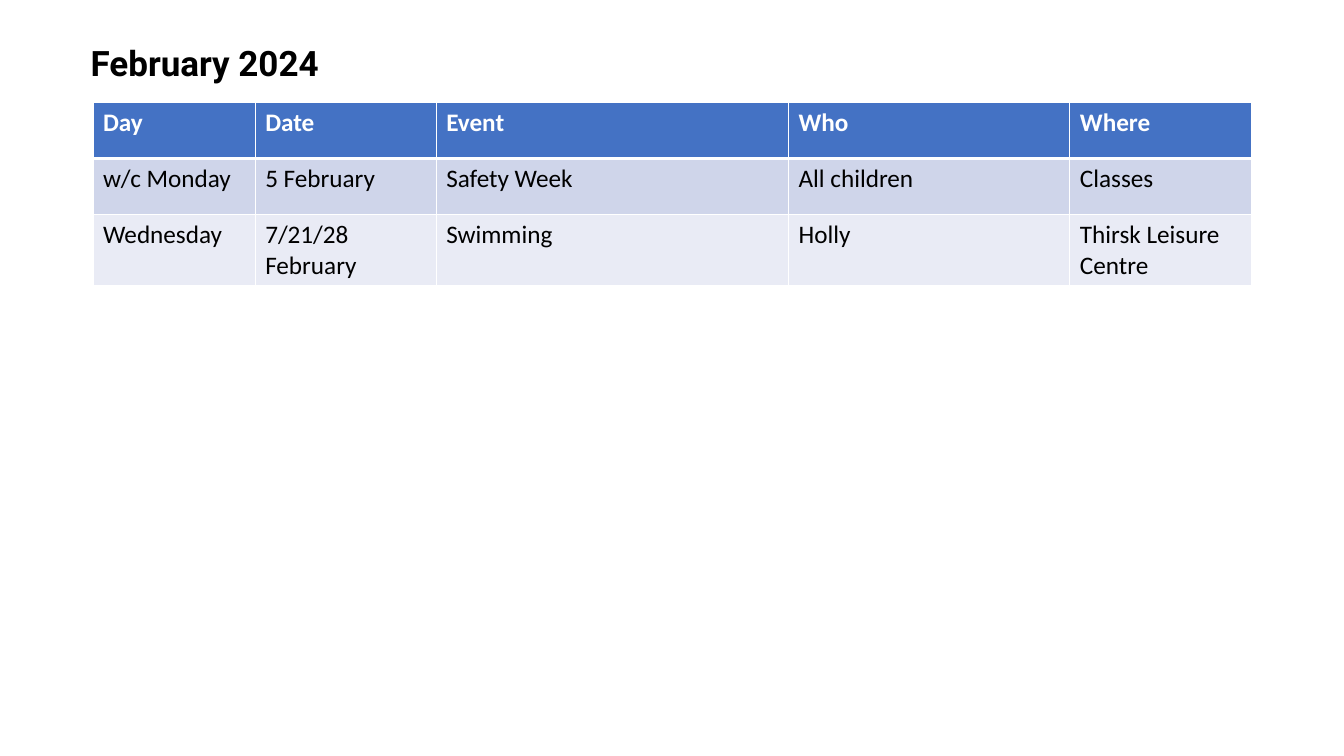
import pptx
import pptx.util
import pptx.dml.color
import pptx.enum.text
import pptx.oxml
import pptx.oxml.ns

Pt = pptx.util.Pt
RGBColor = pptx.dml.color.RGBColor

WHITE = RGBColor(0xFF, 0xFF, 0xFF)
BLACK = RGBColor(0x00, 0x00, 0x00)
HEADER_BLUE = RGBColor(0x44, 0x72, 0xC4)
BAND_DARK = RGBColor(0xCF, 0xD5, 0xEA)
BAND_LIGHT = RGBColor(0xE9, 0xEB, 0xF5)

EVENTS = [
    ["Day", "Date", "Event", "Who", "Where"],
    ["w/c Monday", "5 February", "Safety Week", "All children", "Classes"],
    ["Wednesday", "7/21/28 February", "Swimming", "Holly", "Thirsk Leisure Centre"],
]
ROW_FILLS = [HEADER_BLUE, BAND_DARK, BAND_LIGHT]
COLUMN_WIDTHS = [115.9, 129.3, 251.7, 201, 130.1]
ROW_HEIGHT = 40.2


def format_font(font, name, size, bold, color):
    for attribute, value in {"name": name, "size": Pt(size), "bold": bold}.items():
        setattr(font, attribute, value)
    font.color.rgb = color


def add_border(cell, side, width):
    """Draw a solid white border; call before the cell is filled, in the order L, R, T, B."""
    cell._tc.get_or_add_tcPr().append(pptx.oxml.parse_xml(
        f'<a:ln{side} {pptx.oxml.ns.nsdecls("a")} w="{Pt(width)}">'
        f'<a:solidFill><a:srgbClr val="{WHITE}"/></a:solidFill></a:ln{side}>'))


presentation = pptx.Presentation()
presentation.slide_width = Pt(960)
presentation.slide_height = Pt(540)
slide = presentation.slides.add_slide(presentation.slide_layouts[5])

title = slide.shapes.title
title_box = {"left": 57.6, "top": 25.9, "width": 320.4, "height": 37.4}
for attribute, value in title_box.items():
    setattr(title, attribute, Pt(value))
title.text_frame.text = "February 2024"
title_format = {
    "word_wrap": True,
    "auto_size": pptx.enum.text.MSO_AUTO_SIZE.SHAPE_TO_FIT_TEXT,
    "vertical_anchor": pptx.enum.text.MSO_ANCHOR.TOP,
}
for attribute, value in title_format.items():
    setattr(title.text_frame, attribute, value)
title_paragraph = title.text_frame.paragraphs[0]
title_paragraph.alignment = pptx.enum.text.PP_ALIGN.LEFT
format_font(title_paragraph.runs[0].font, "Roboto", 25, True, BLACK)

table = slide.shapes.add_table(
    len(EVENTS), len(COLUMN_WIDTHS), Pt(66.4), Pt(73),
    Pt(sum(COLUMN_WIDTHS)), Pt(ROW_HEIGHT * len(EVENTS))).table
for column, width in zip(table.columns, COLUMN_WIDTHS):
    column.width = Pt(width)

for row_index, (row, texts, fill) in enumerate(zip(table.rows, EVENTS, ROW_FILLS)):
    row.height = Pt(ROW_HEIGHT)
    is_header = row_index == 0
    top_width = 3 if row_index == 1 else 1
    bottom_width = 3 if is_header else 1
    for cell, text in zip(row.cells, texts):
        for side, width in {"L": 1, "R": 1, "T": top_width, "B": bottom_width}.items():
            add_border(cell, side, width)
        cell.fill.solid()
        cell.fill.fore_color.rgb = fill
        cell.text = text
        format_font(cell.text_frame.paragraphs[0].runs[0].font, "Calibri", 18,
                    is_header, WHITE if is_header else BLACK)

presentation.save("out.pptx")
